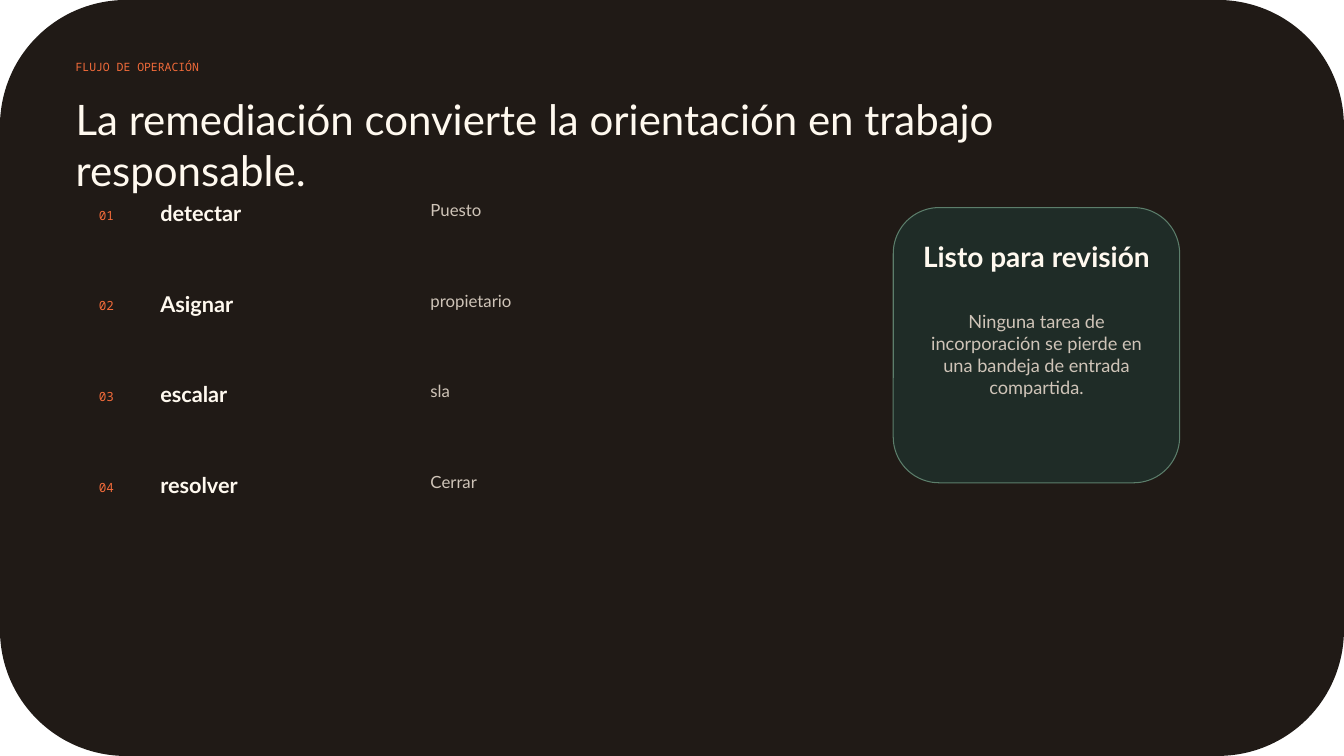
"""Build the remediation workflow slide."""
import pptx
import pptx.dml.color
import pptx.enum.shapes
import pptx.enum.text
import pptx.util

Inches = pptx.util.Inches
ALIGN = pptx.enum.text.PP_ALIGN

KICKER = "FLUJO DE OPERACIÓN"
TITLE = "La remediación convierte la orientación en trabajo responsable."
STEPS = [
    ("detectar", "Puesto"),
    ("Asignar", "propietario"),
    ("escalar", "sla"),
    ("resolver", "Cerrar"),
]
CARD_TITLE = "Listo para revisión"
CARD_BODY = "Ninguna tarea de incorporación se pierde en una bandeja de entrada compartida."

SLIDE_W, SLIDE_H = 13.33, 7.5
MARGIN = 0.75
STEP_TOP, STEP_PITCH = 1.98, 0.9
CARD = (8.86, 2.06, 2.84, 2.73)
CARD_PAD = 0.27

THEME = {
    "colors": {
        "ground": "201A16",
        "card": "1F2C27",
        "border": "5C7E6B",
        "accent": "F26B3A",
        "light": "FFF9EF",
        "muted": "CFC4B8",
    },
    "text": {
        "kicker": ("Noto Sans Mono", 8.2, False, "accent"),
        "title": ("Lato", 30, False, "light"),
        "number": ("Noto Sans Mono", 9, False, "accent"),
        "step": ("Lato", 15.5, True, "light"),
        "detail": ("Lato", 12, False, "muted"),
        "card_title": ("Lato", 20, True, "light"),
        "card_body": ("Lato", 13, False, "muted"),
    },
}


def color(name):
    return pptx.dml.color.RGBColor.from_string(THEME["colors"][name])


def write(shape, text, style, align=ALIGN.LEFT):
    tf = shape.text_frame
    frame = {
        "margin_left": 0,
        "margin_top": 0,
        "margin_right": 0,
        "margin_bottom": 0,
        "word_wrap": True,
        "auto_size": pptx.enum.text.MSO_AUTO_SIZE.NONE,
        "vertical_anchor": pptx.enum.text.MSO_ANCHOR.TOP,
    }
    for key, value in frame.items():
        setattr(tf, key, value)
    p = tf.paragraphs[0]
    p.alignment = align
    r = p.add_run()
    r.text = text
    name, size, bold, ink = THEME["text"][style]
    for key, value in {"name": name, "size": pptx.util.Pt(size), "bold": bold}.items():
        setattr(r.font, key, value)
    r.font.color.rgb = color(ink)


def add_text(s, box, text, style, align=ALIGN.LEFT):
    write(s.shapes.add_textbox(*map(Inches, box)), text, style, align)


def add_panel(s, box, fill, border=None):
    sp = s.shapes.add_shape(
        pptx.enum.shapes.MSO_SHAPE.ROUNDED_RECTANGLE, *map(Inches, box))
    sp.shadow.inherit = False
    sp.fill.solid()
    sp.fill.fore_color.rgb = color(fill)
    if border:
        sp.line.color.rgb = color(border)
        sp.line.width = pptx.util.Pt(0.75)
    else:
        sp.line.fill.background()
    return sp


def add_title(s):
    title = s.shapes.title
    box = (MARGIN, 0.93, 9.41, 0.71)
    for key, value in zip(("left", "top", "width", "height"), box):
        setattr(title, key, Inches(value))
    write(title, TITLE, "title")
    return title


def add_steps(s):
    for i, (step, detail) in enumerate(STEPS):
        top = STEP_TOP + i * STEP_PITCH
        add_text(s, (0.98, top + 0.08, 0.55, 0.24), f"{i + 1:02}", "number")
        add_text(s, (1.59, top, 2.84, 0.28), step, "step")
        add_text(s, (4.27, top, 3.94, 0.31), detail, "detail")


def add_card(s):
    left, top, width, height = CARD
    add_panel(s, CARD, "card", "border")
    x, w = left + CARD_PAD, width - 2 * CARD_PAD
    add_text(s, (x, top + 0.32, w, 0.46), CARD_TITLE, "card_title", ALIGN.CENTER)
    add_text(s, (x, top + 1.02, w, 0.98), CARD_BODY, "card_body", ALIGN.CENTER)


def main():
    prs = pptx.Presentation()
    prs.slide_width, prs.slide_height = Inches(SLIDE_W), Inches(SLIDE_H)
    s = prs.slides.add_slide(prs.slide_layouts[5])
    ground = add_panel(s, (0, 0, SLIDE_W, SLIDE_H), "ground")
    title = add_title(s)
    title.element.addprevious(ground.element)
    add_text(s, (MARGIN, 0.6, 4.59, 0.28), KICKER, "kicker")
    add_steps(s)
    add_card(s)
    prs.save("out.pptx")


if __name__ == "__main__":
    main()
